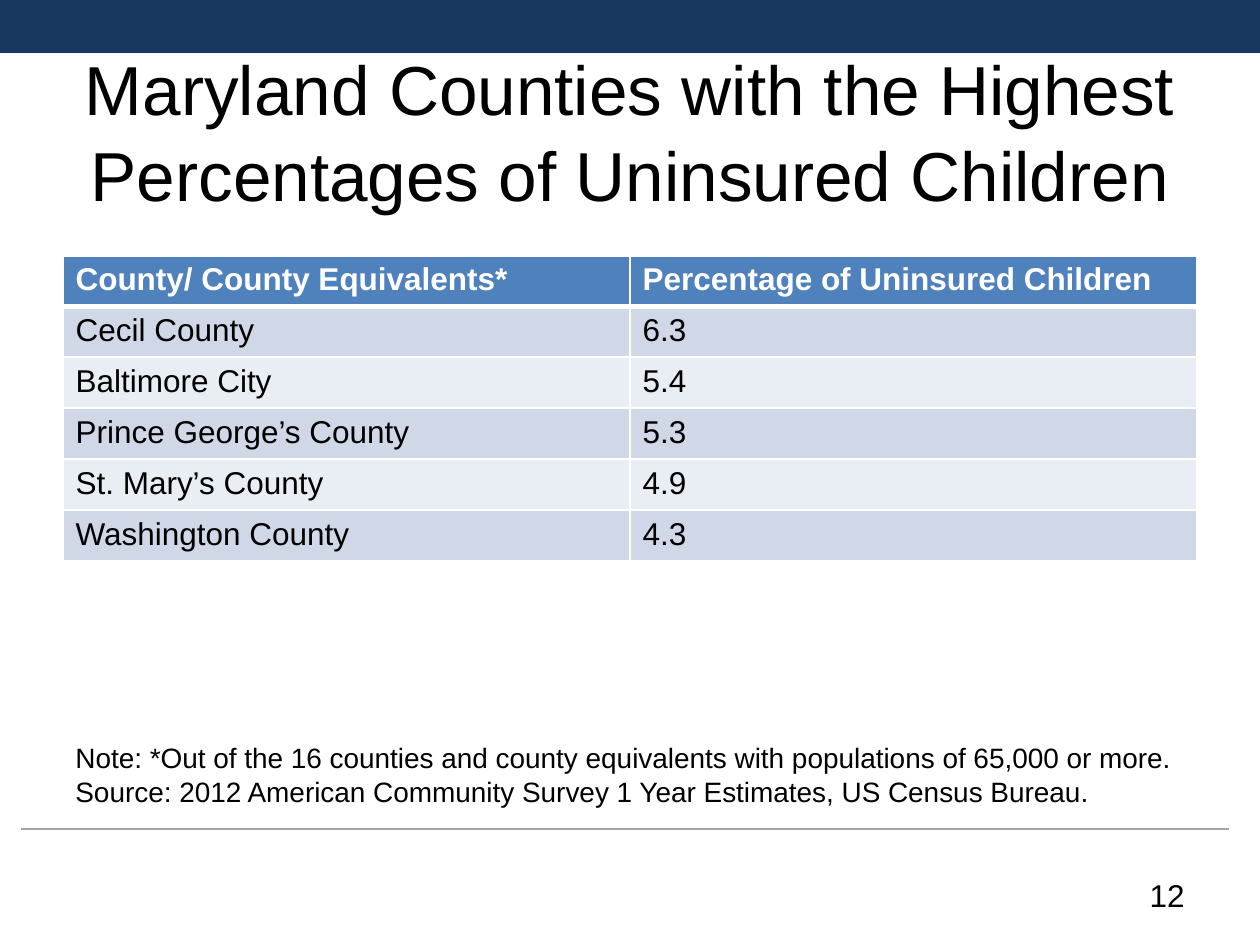
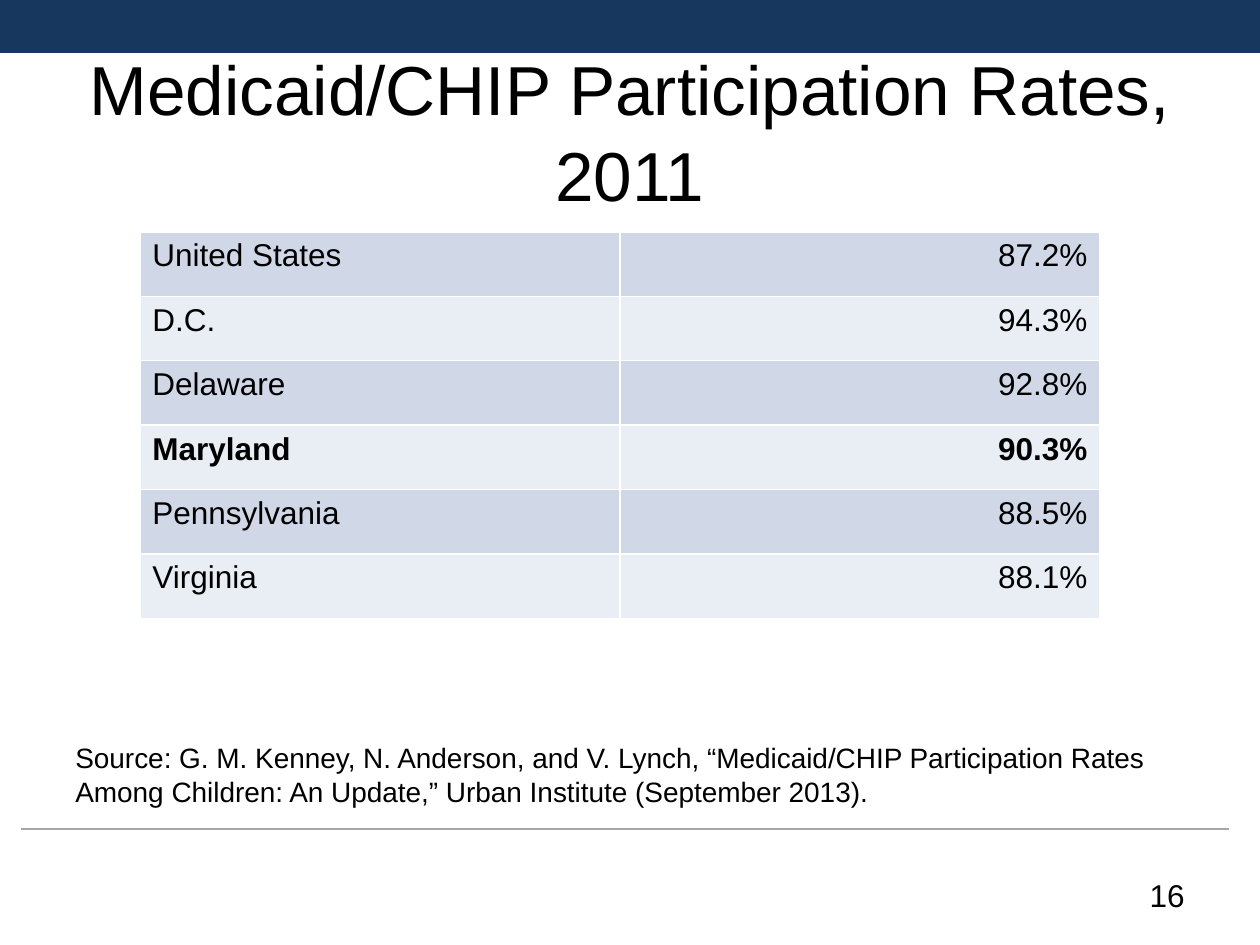
from dataclasses import dataclass

from pptx import Presentation
from pptx.dml.color import RGBColor
from pptx.enum.shapes import MSO_CONNECTOR as Connector, MSO_SHAPE as Shape
from pptx.enum.text import MSO_ANCHOR as Anchor, MSO_AUTO_SIZE as AutoSize, PP_ALIGN as Align
from pptx.oxml.ns import qn
from pptx.util import Inches, Pt
from lxml.etree import SubElement


@dataclass(frozen=True)
class Theme:
    font: str = "Arial"
    text: str = "000000"
    white: str = "FFFFFF"
    band: str = "17375E"
    rule: str = "A6A6A6"
    header: str = "4F81BD"
    stripes: tuple = ("D0D8E8", "E9EDF4")
    title_size: float = 39.6
    body_size: float = 18
    note_size: float = 16


class Deck:
    """Holds the theme and current slide; positions are in grid columns and rows."""
    COLUMNS, ROWS = 100, 75

    def __init__(self, theme):
        self.theme = theme
        self.presentation = Presentation()
        self.presentation.slide_width = Inches(10)
        self.presentation.slide_height = Inches(7.5)
        self.slide = None

    def across(self, columns):
        return round(self.presentation.slide_width * columns / self.COLUMNS)

    def down(self, rows):
        return round(self.presentation.slide_height * rows / self.ROWS)

    def box(self, left, top, width, height):
        return self.across(left), self.down(top), self.across(width), self.down(height)

    def style(self, paragraph, size, align=Align.LEFT, color=None, bold=False):
        paragraph.alignment = align
        font = paragraph.font
        font.name, font.size, font.bold = self.theme.font, Pt(size), bold
        font.color.rgb = RGBColor.from_string(color or self.theme.text)

    # Shared frame of every slide
    def new_slide(self, title, number):
        self.slide = self.presentation.slides.add_slide(self.presentation.slide_layouts[6])
        self.band(0, 0, self.COLUMNS, 4.2)
        self.rule(1.7, 97.5, 65.8)
        heading = self.text([title], (5, 5, 90, 10.5), self.theme.title_size,
                            Align.CENTER, Anchor.MIDDLE)
        heading.paragraphs[0].line_spacing = 1.04
        self.text([str(number)], (71.7, 69, 23.3, 4), self.theme.body_size, Align.RIGHT)

    def band(self, *place):
        shape = self.slide.shapes.add_shape(Shape.RECTANGLE, *self.box(*place))
        shape.shadow.inherit = False
        shape.fill.solid()
        shape.fill.fore_color.rgb = RGBColor.from_string(self.theme.band)
        shape.line.fill.background()

    def rule(self, start, end, row):
        line = self.slide.shapes.add_connector(
            Connector.STRAIGHT, self.across(start), self.down(row),
            self.across(end), self.down(row))
        line.line.color.rgb = RGBColor.from_string(self.theme.rule)
        line.line.width = Pt(0.75)
        SubElement(line._element.spPr, qn("a:effectLst"))

    def text(self, lines, place, size, align=Align.LEFT, anchor=Anchor.TOP):
        frame = self.slide.shapes.add_textbox(*self.box(*place)).text_frame
        frame.word_wrap = True
        frame.vertical_anchor = anchor
        frame.text = "\n".join(lines)
        for paragraph in frame.paragraphs:
            self.style(paragraph, size, align)
        return frame

    def note(self, lines, width=90):
        frame = self.text(lines, (5, 58.3, width, 6.4), self.theme.note_size)
        frame.auto_size = AutoSize.SHAPE_TO_FIT_TEXT

    # Tables
    def table(self, rows, place, header_height=None, value_align=Align.LEFT, bold_label=None):
        table = self.slide.shapes.add_table(len(rows), len(rows[0]), *self.box(*place)).table
        table.first_row = header_height is not None
        table.horz_banding = False
        if table.first_row:
            table.rows[0].height = self.down(header_height)
            body_height = self.down((place[3] - header_height) / (len(rows) - 1))
            for row in list(table.rows)[1:]:
                row.height = body_height
        for row_index, values in enumerate(rows):
            is_header = table.first_row and row_index == 0
            stripe = self.theme.stripes[(row_index - table.first_row) % 2]
            for column_index, value in enumerate(values):
                cell = table.cell(row_index, column_index)
                cell.text = value
                self.style(cell.text_frame.paragraphs[0], self.theme.body_size,
                           value_align if column_index else Align.LEFT,
                           self.theme.white if is_header else self.theme.text,
                           is_header or values[0] == bold_label)
                self.borders(cell, top=3 if table.first_row and row_index == 1 else 1,
                             bottom=3 if is_header else 1)
                cell.fill.solid()
                cell.fill.fore_color.rgb = RGBColor.from_string(
                    self.theme.header if is_header else stripe)

    def borders(self, cell, top, bottom):
        properties = cell._tc.get_or_add_tcPr()
        for side, width in (("L", 1), ("R", 1), ("T", top), ("B", bottom)):
            line = SubElement(properties, qn(f"a:ln{side}"), w=str(Pt(width)))
            fill = SubElement(line, qn("a:solidFill"))
            SubElement(fill, qn("a:srgbClr"), val=self.theme.white)


def main():
    deck = Deck(Theme())

    # Counties with the most uninsured children
    deck.new_slide("Maryland Counties with the Highest Percentages of Uninsured Children", 12)
    deck.table([
        ("County/ County Equivalents*", "Percentage of Uninsured Children"),
        ("Cecil County", "6.3"),
        ("Baltimore City", "5.4"),
        ("Prince George’s County", "5.3"),
        ("St. Mary’s County", "4.9"),
        ("Washington County", "4.3"),
    ], (5, 20.3, 90, 24), header_height=3.75)
    deck.note([
        "Note: *Out of the 16 counties and county equivalents with populations of 65,000 or more.",
        "Source: 2012 American Community Survey 1 Year Estimates, US Census Bureau.",
    ], width=91.1)

    # Participation rates by state
    deck.new_slide("Medicaid/CHIP Participation Rates, 2011", 16)
    deck.table([
        ("United States", "87.2%"),
        ("D.C.", "94.3%"),
        ("Delaware", "92.8%"),
        ("Maryland", "90.3%"),
        ("Pennsylvania", "88.5%"),
        ("Virginia", "88.1%"),
    ], (11.1, 18.4, 76.2, 30.7), value_align=Align.RIGHT, bold_label="Maryland")
    deck.note([
        "Source: G. M. Kenney, N. Anderson, and V. Lynch, “Medicaid/CHIP Participation Rates "
        "Among Children: An Update,” Urban Institute (September 2013).",
    ])

    deck.presentation.save("out.pptx")


if __name__ == "__main__":
    main()
